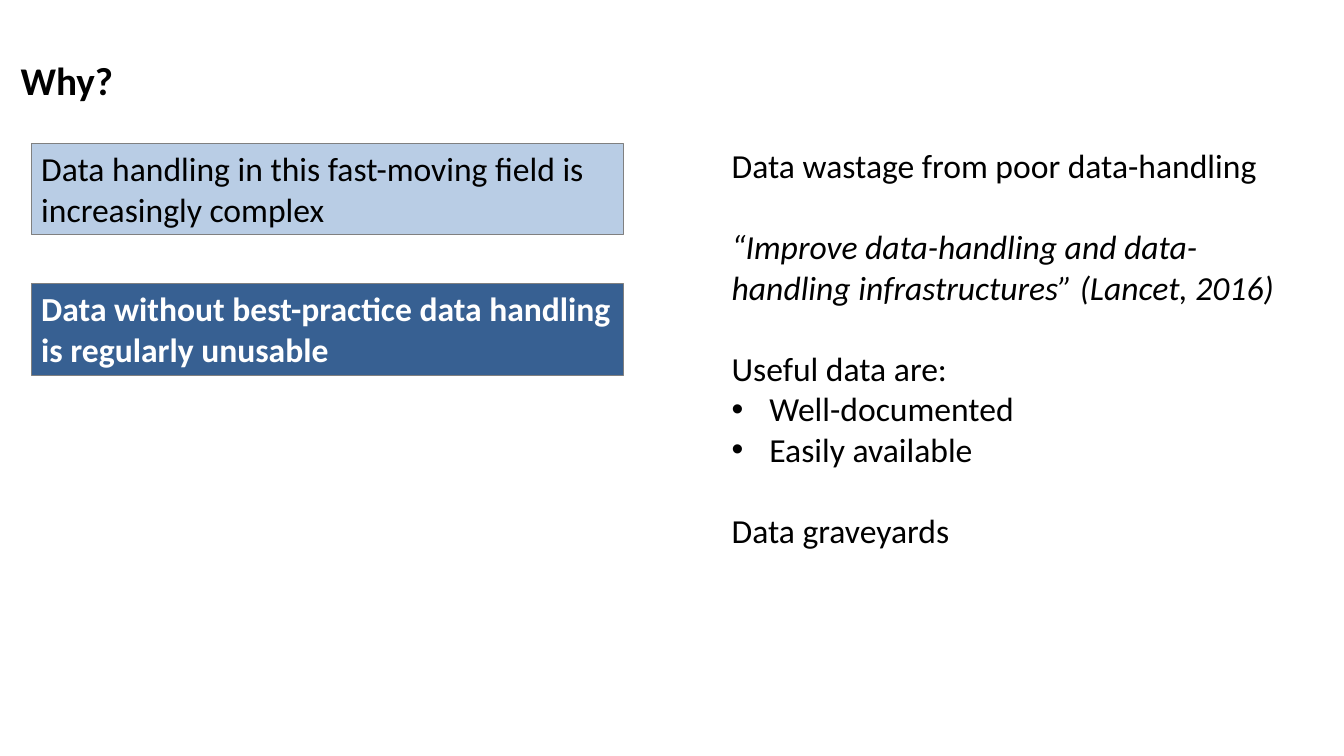
from lxml.etree import SubElement
from pptx import Presentation
from pptx.dml.color import RGBColor
from pptx.enum.shapes import MSO_SHAPE as Preset
from pptx.enum.text import MSO_ANCHOR as Anchor, PP_ALIGN as Align
from pptx.oxml.ns import qn
from pptx.util import Cm, Pt

BLACK = RGBColor(0x00, 0x00, 0x00)
WHITE = RGBColor(0xFF, 0xFF, 0xFF)
PALE_BLUE = RGBColor(0xB9, 0xCD, 0xE5)
DARK_BLUE = RGBColor(0x37, 0x60, 0x92)
GREY = RGBColor(0x80, 0x80, 0x80)

COLUMN_WIDTH = Cm(14.91)
BULLET_INDENT = Cm(0.95)
LINE_GAP = Pt(29.3)


def write(para, text, size=24, color=BLACK, bold=False, italic=False,
          bullet=False, gap=False):
    para.alignment = Align.LEFT
    if gap:
        para.space_before = LINE_GAP
    if bullet:
        properties = para._p.get_or_add_pPr()
        properties.set("marL", str(BULLET_INDENT))
        properties.set("indent", str(-BULLET_INDENT))
        SubElement(properties, qn("a:buFont")).set("typeface", "Arial")
        SubElement(properties, qn("a:buChar")).set("char", "•")
    span = para.add_run()
    span.text = text
    span.font.name = "Calibri"
    span.font.size = Pt(size)
    span.font.bold = bold
    span.font.italic = italic
    span.font.color.rgb = color


deck = Presentation()
deck.slide_width, deck.slide_height = Cm(33.87), Cm(19.05)
page = deck.slides.add_slide(deck.slide_layouts[6])

reasons = page.shapes.add_textbox(Cm(18.19), Cm(3.53), COLUMN_WIDTH, Cm(10.52))
reasons.text_frame.word_wrap = True
reason_lines = [
    ("Data wastage from poor data-handling", {}),
    ("“Improve data-handling and data-handling infrastructures” (Lancet, 2016)",
     {"italic": True, "gap": True}),
    ("Useful data are:", {"gap": True}),
    ("Well-documented", {"bullet": True}),
    ("Easily available", {"bullet": True}),
    ("Data graveyards", {"gap": True}),
]
for number, (text, style) in enumerate(reason_lines):
    frame = reasons.text_frame
    para = frame.add_paragraph() if number else frame.paragraphs[0]
    write(para, text, **style)

heading = page.shapes.add_textbox(Cm(0.27), Cm(1.3), Cm(3.18), Cm(1.45))
heading.text_frame.word_wrap = True
write(heading.text_frame.paragraphs[0], "Why?", size=28, bold=True)

statements = [
    (3.61, PALE_BLUE, "Data handling in this fast-moving field is increasingly complex",
     {}),
    (7.14, DARK_BLUE, "Data without best-practice data handling is regularly unusable",
     {"color": WHITE, "bold": True}),
]
for top, fill, text, style in statements:
    box = page.shapes.add_shape(Preset.RECTANGLE, Cm(0.79), Cm(top), COLUMN_WIDTH, Cm(2.31))
    box.shadow.inherit = False
    box.fill.solid()
    box.fill.fore_color.rgb = fill
    box.line.color.rgb = GREY
    box.line.width = Pt(0.5)
    box.text_frame.word_wrap = True
    box.text_frame.vertical_anchor = Anchor.TOP
    write(box.text_frame.paragraphs[0], text, **style)

deck.save("out.pptx")
